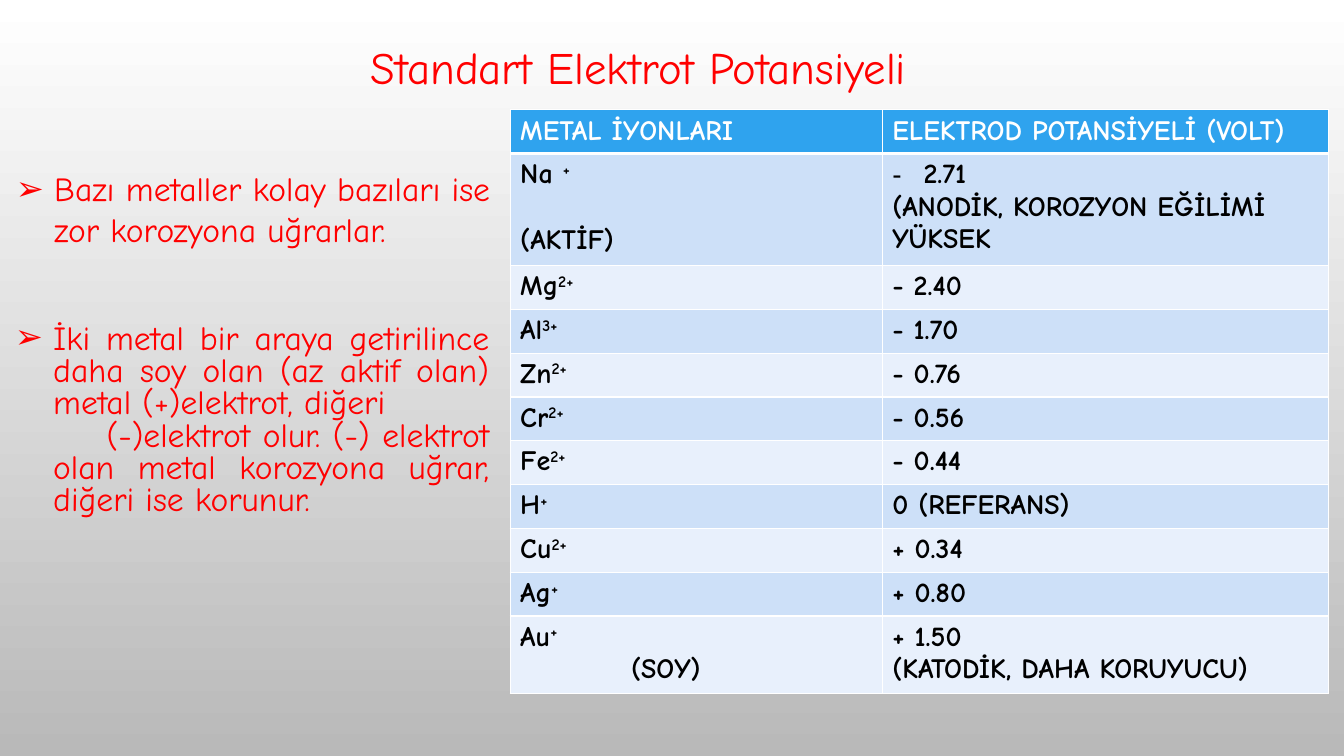
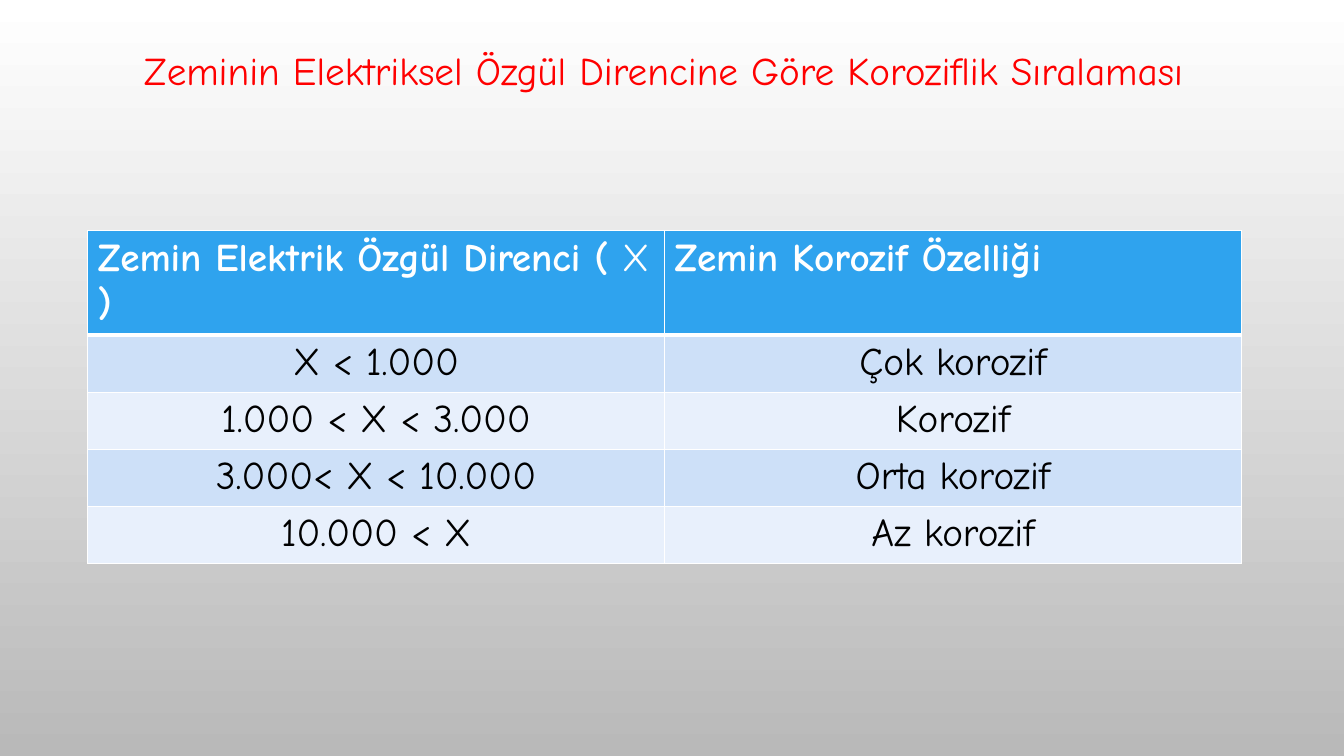
from lxml import etree
from pptx import Presentation
from pptx.dml.color import RGBColor
from pptx.enum.text import MSO_ANCHOR, PP_ALIGN as Align
from pptx.oxml.ns import qn
from pptx.util import Inches, Pt

# Shared look
FONT = "Comic Neue"
RED, WHITE, BLACK = "FF0000", "FFFFFF", "000000"
BACKDROP = (WHITE, "B9B9B9")
HEADER_FILL, BAND_FILLS = "2FA3EE", ("CDE0F8", "E8F0FC")

# Content: a paragraph is text or (text, layout); ^ encloses specially styled text
POTENTIAL_TITLE = "Standart Elektrot Potansiyeli"
POTENTIALS = [
    (["METAL İYONLARI"], ["ELEKTROD POTANSİYELİ (VOLT)"]),
    (["Na ^+^", ("(AKTİF)", {"before": 24})],
     [("2.71", {"left": 0.31, "first": -0.31, "bullet": "-"}),
      "(ANODİK, KOROZYON EĞİLİMİ YÜKSEK"]),
    (["Mg^2+^"], ["- 2.40"]),
    (["Al^3+^"], ["- 1.70"]),
    (["Zn^2+^"], ["- 0.76"]),
    (["Cr^2+^"], ["- 0.56"]),
    (["Fe^2+^"], ["- 0.44"]),
    (["H^+^"], ["0 (REFERANS)"]),
    (["Cu^2+^"], ["+ 0.34"]),
    (["Ag^+^"], ["+ 0.80"]),
    (["Au^+^", ("(SOY)", {"left": 1.1})],
     ["+ 1.50", "(KATODİK, DAHA KORUYUCU)"]),
]
POTENTIAL_HEIGHTS = [0.43, 1.11] + [0.435] * 8 + [0.77]

ARROW = {"left": 0.38, "first": -0.38, "bullet": "➢"}
EASE_NOTE = [("Bazı metaller kolay bazıları ise zor korozyona uğrarlar.", ARROW)]
PAIR_NOTE = [
    ("İki metal bir araya getirilince daha soy olan (az aktif olan) metal "
     "(+)elektrot, diğeri", ARROW),
    ("(-)elektrot olur. (-) elektrot olan metal korozyona uğrar, "
     "diğeri ise korunur.", {"left": 0.38, "first": 0.53}),
]

SOIL_TITLE = "Zeminin Elektriksel Özgül Direncine Göre Koroziflik Sıralaması"
SOILS = [
    (["Zemin Elektrik Özgül Direnci ( ^X ^)"], ["Zemin Korozif Özelliği"]),
    (["X < 1.000"], ["Çok korozif"]),
    (["1.000 < X < 3.000"], ["Korozif"]),
    (["3.000< X < 10.000"], ["Orta korozif"]),
    (["10.000 < X"], ["Az korozif"]),
]
SOIL_HEIGHTS = [0.98] + [0.55] * 4


def rgb(color):
    return RGBColor.from_string(color)


def write(frame, paragraphs, size, color, align=Align.LEFT, bold=False,
          spacing=None, special=None):
    """Fill a text frame; special holds run attributes for ^marked^ text."""
    for i, item in enumerate(paragraphs):
        text, layout = (item, {}) if isinstance(item, str) else item
        para = frame.paragraphs[0] if i == 0 else frame.add_paragraph()
        para.alignment = align
        para.space_before = Pt(layout.get("before", 0))
        if spacing:
            para.line_spacing = spacing
        props = para._p.get_or_add_pPr()
        props.set("marL", str(Inches(layout.get("left", 0))))
        props.set("indent", str(Inches(layout.get("first", 0))))
        if "bullet" in layout:
            etree.SubElement(props, qn("a:buFont"), typeface="Arial")
            etree.SubElement(props, qn("a:buChar"), char=layout["bullet"])
        font = para.font
        font.name, font.size, font.bold = FONT, Pt(size), bold
        font.color.rgb = rgb(color)
        for n, piece in enumerate(text.split("^")):
            if piece:
                run = para.add_run()
                run.text = piece
                if n % 2:
                    for name, value in special.items():
                        run._r.get_or_add_rPr().set(name, value)


def add_text(slide, box, paragraphs, size, **style):
    frame = slide.shapes.add_textbox(*map(Inches, box)).text_frame
    frame.word_wrap = True
    write(frame, paragraphs, size, RED, **style)


def add_borders(cell, row):
    # The rule below the header row is thicker
    props = cell._tc.get_or_add_tcPr()
    widths = {"L": 1, "R": 1, "T": 3 if row == 1 else 1, "B": 3 if row == 0 else 1}
    for side, width in widths.items():
        line = etree.SubElement(props, qn("a:ln" + side), w=str(Pt(width)))
        fill = etree.SubElement(line, qn("a:solidFill"))
        etree.SubElement(fill, qn("a:srgbClr"), val=WHITE)


def add_grid(slide, corner, widths, heights, rows, size, special,
             body_align=Align.LEFT, body_bold=False):
    extent = sum(widths), sum(heights)
    table = slide.shapes.add_table(len(rows), len(widths),
                                   *map(Inches, corner + extent)).table
    for column, width in zip(table.columns, widths):
        column.width = Inches(width)
    for r, (row, height) in enumerate(zip(rows, heights)):
        table.rows[r].height = Inches(height)
        header = r == 0
        for c, paragraphs in enumerate(row):
            cell = table.cell(r, c)
            add_borders(cell, r)
            cell.vertical_anchor = MSO_ANCHOR.TOP
            cell.fill.solid()
            cell.fill.fore_color.rgb = rgb(HEADER_FILL if header else BAND_FILLS[(r - 1) % 2])
            write(cell.text_frame, paragraphs, size, WHITE if header else BLACK,
                  align=Align.LEFT if header else body_align,
                  bold=header or body_bold, special=special)


def main():
    prs = Presentation()
    prs.slide_width, prs.slide_height = Inches(13.33), Inches(7.5)
    blank = prs.slide_layouts[6]

    # Backdrop on the master, light at the top
    backdrop = prs.slide_master.background.fill
    backdrop.gradient()
    backdrop.gradient_angle = 270
    for stop, color in zip(backdrop.gradient_stops, BACKDROP):
        stop.color.rgb = rgb(color)

    # Electrode potentials
    slide = prs.slides.add_slide(blank)
    add_text(slide, (3.58, 0.34, 6.37, 0.64), [POTENTIAL_TITLE], 32)
    add_grid(slide, (5.06, 1.09), (3.69, 4.43), POTENTIAL_HEIGHTS, POTENTIALS,
             20, {"baseline": "30000"}, body_bold=True)
    add_text(slide, (0.06, 1.62, 4.9, 0.91), EASE_NOTE, 24, align=Align.JUSTIFY)
    add_text(slide, (0.05, 3.17, 4.9, 2.37), PAIR_NOTE, 24,
             align=Align.JUSTIFY, spacing=0.8)

    # Soil resistivity
    slide = prs.slides.add_slide(blank)
    add_grid(slide, (0.87, 2.29), (5.72, 5.72), SOIL_HEIGHTS, SOILS,
             28, {"b": "0"}, body_align=Align.CENTER)
    add_text(slide, (1.03, 0.41, 11.1, 1.04), [SOIL_TITLE], 28, align=Align.CENTER)

    prs.save("out.pptx")


if __name__ == "__main__":
    main()
